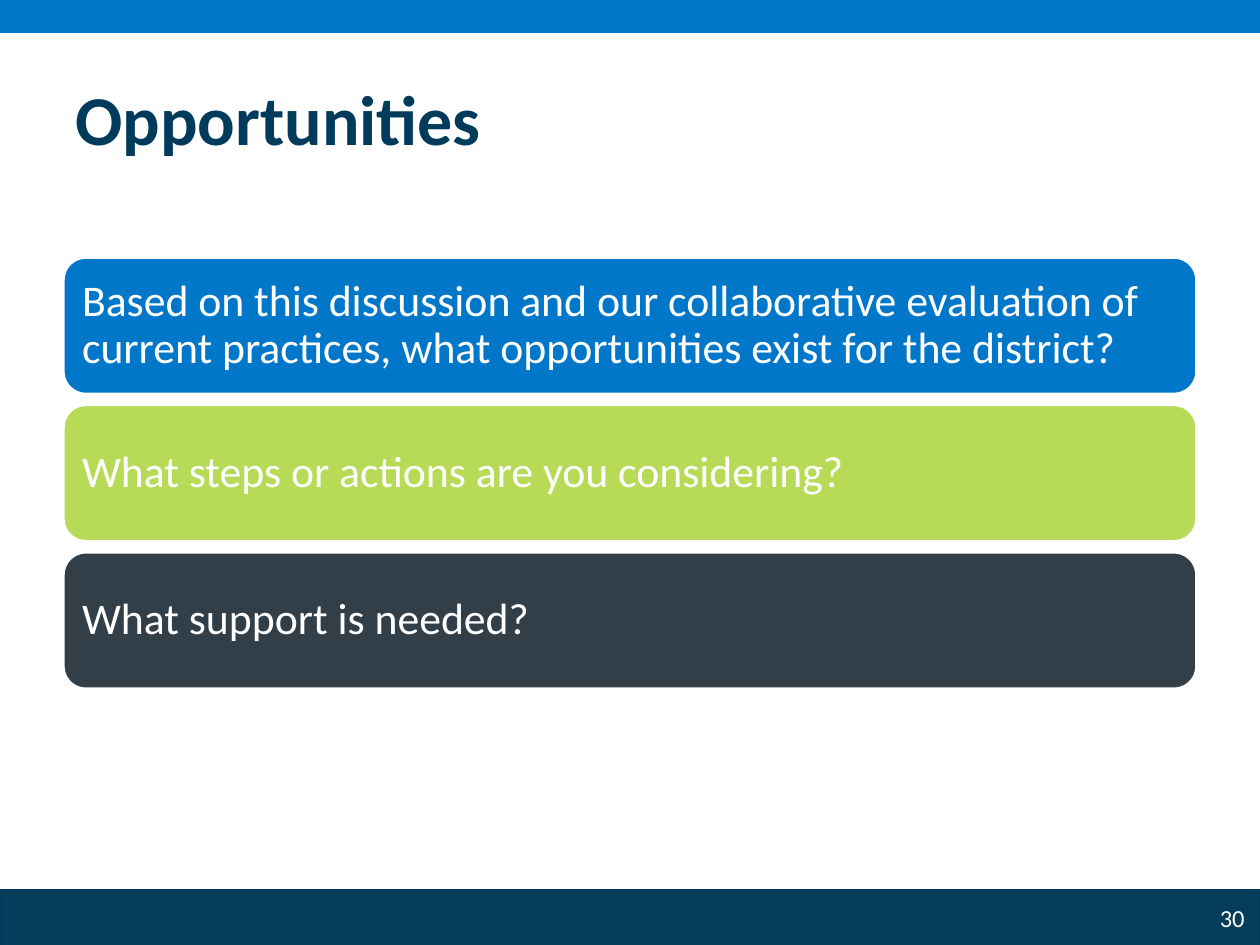
import pptx
import pptx.dml.color
import pptx.enum.shapes
import pptx.enum.text
import pptx.util

Inches = pptx.util.Inches
Pt = pptx.util.Pt
Align = pptx.enum.text.PP_ALIGN
Shape = pptx.enum.shapes.MSO_SHAPE

NAVY = "003B5C"
BLUE = "0077C8"
WHITE = "FFFFFF"


def color(value):
    return pptx.dml.color.RGBColor.from_string(value)


def write(frame, text, size, ink, bold=False, align=Align.LEFT, spacing=1.0, inset=None):
    frame.word_wrap = True
    frame.auto_size = pptx.enum.text.MSO_AUTO_SIZE.NONE
    frame.vertical_anchor = pptx.enum.text.MSO_ANCHOR.MIDDLE
    if inset is not None:
        frame.margin_left = frame.margin_right = Inches(inset)
        frame.margin_top = frame.margin_bottom = Inches(inset)
    para = frame.paragraphs[0]
    para.alignment = align
    para.line_spacing = spacing
    span = para.add_run()
    span.text = text
    span.font.name = "Calibri"
    span.font.size = Pt(size)
    span.font.bold = bold
    span.font.color.rgb = color(ink)


class SlideBuilder:
    font_size = 25
    line_width = 2

    def __init__(self, deck):
        self.slide = deck.slides.add_slide(deck.slide_layouts[5])

    def title(self, text, left, top, width, height):
        box = self.slide.shapes.title
        box.left, box.top = Inches(left), Inches(top)
        box.width, box.height = Inches(width), Inches(height)
        write(box.text_frame, text, 40, NAVY, bold=True)

    def shape(self, kind, left, top, width, height, fill, line):
        box = self.slide.shapes.add_shape(
            kind, Inches(left), Inches(top), Inches(width), Inches(height))
        box.shadow.inherit = False
        box.fill.solid()
        box.fill.fore_color.rgb = color(fill)
        box.line.color.rgb = color(line)
        box.line.width = Pt(self.line_width)
        return box

    def bar(self, top, height, fill, line):
        self.shape(Shape.RECTANGLE, 0, top, 10, height, fill, line)

    def question(self, text, top, fill):
        box = self.shape(Shape.ROUNDED_RECTANGLE, 0.5, top, 9, 1.09, fill, WHITE)
        write(box.text_frame, text, self.font_size, WHITE, spacing=0.9, inset=0.1)

    def page_number(self, text):
        box = self.slide.shapes.add_textbox(
            Inches(9.56), Inches(7.07), Inches(0.44), Inches(0.43))
        write(box.text_frame, text, 14, WHITE, align=Align.CENTER, inset=0)


def main():
    deck = pptx.Presentation()
    deck.slide_width, deck.slide_height = Inches(10), Inches(7.5)
    builder = SlideBuilder(deck)
    builder.bar(7.07, 0.45, "043E5A", NAVY)
    builder.bar(0, 0.25, BLUE, BLUE)
    builder.page_number("30")
    builder.title("Opportunities", 0.5, 0.52, 9, 0.83)
    questions = [
        ("Based on this discussion and our collaborative evaluation of current "
         "practices, what opportunities exist for the district?", BLUE),
        ("What steps or actions are you considering?", "B7DB57"),
        ("What support is needed?", "333F48"),
    ]
    for index, (text, fill) in enumerate(questions):
        builder.question(text, 2.04 + 1.17 * index, fill)
    deck.save("out.pptx")


if __name__ == "__main__":
    main()
